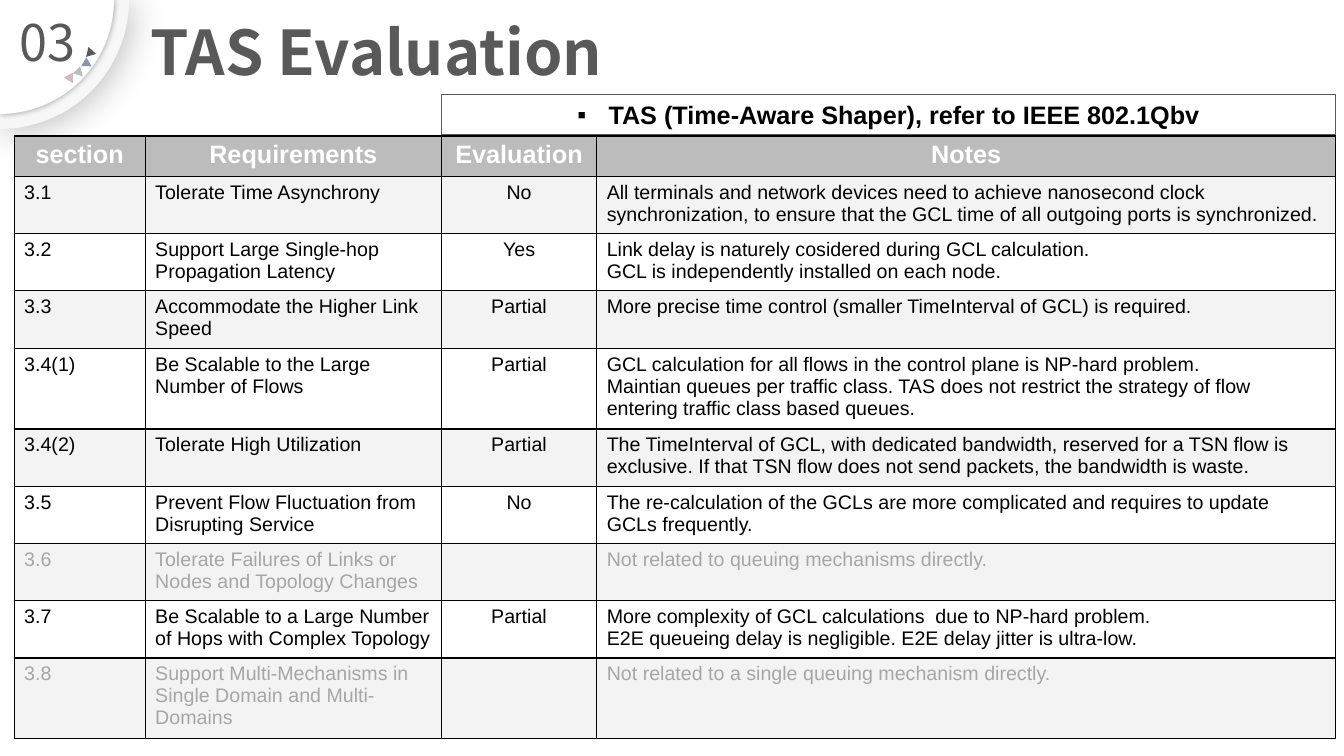
import dataclasses
import math

import lxml.etree
import pptx
import pptx.dml.color
import pptx.enum.shapes
import pptx.enum.text
import pptx.oxml.ns
import pptx.util

WIDE = pptx.util.Inches(13.33)
HIGH = pptx.util.Inches(7.5)
SANS, HEAD = "Arial", "Noto Sans CJK SC"
DARK, GRAY, PALE, DIM = "595959", "BCBCBC", "F3F3F3", "A6A6A6"
BLACK, WHITE = "000000", "FFFFFF"
ALIGN = pptx.enum.text.PP_ALIGN
FORMS = pptx.enum.shapes.MSO_SHAPE
qn = pptx.oxml.ns.qn


def across(share: float) -> int:
    """Percent of the slide's width."""
    return round(WIDE * share / 100)


def down(share: float) -> int:
    """Percent of the slide's height."""
    return round(HIGH * share / 100)


@dataclasses.dataclass
class Box:
    """Place and size in percent of the slide."""
    left: float
    top: float
    wide: float
    high: float

    def spot(self) -> tuple[int, int, int, int]:
        return across(self.left), down(self.top), across(self.wide), down(self.high)


@dataclasses.dataclass
class Disc:
    reach: float
    fill: str
    dark: int
    blur: float
    shift: float


@dataclasses.dataclass
class Chip:
    left: float
    top: float
    turn: float
    fill: str


@dataclasses.dataclass
class Row:
    label: str
    need: str
    grade: str
    notes: str
    high: float = 7.33
    ink: str = BLACK


DISCS = [Disc(9.6, "F7F7F7", 25, 26, 3), Disc(8.48, WHITE, 40, 5, 0)]
CHIPS = [
    Chip(6.45, 6.4, 103.1, DARK),
    Chip(6.15, 7.87, 120.4, "8496B0"),
    Chip(5.55, 9.07, 135.4, GRAY),
    Chip(4.88, 9.87, 150.4, "D7B5C6"),
]
COLS = [9.75, 22.05, 11.55, 54.98]
ROWS = [
    Row("section", "Requirements", "Evaluation", "Notes", 5.07, WHITE),
    Row("3.1", "Tolerate Time Asynchrony", "No",
        "All terminals and network devices need to achieve nanosecond clock synchronization, "
        "to ensure that the GCL time of all outgoing ports is synchronized."),
    Row("3.2", "Support Large Single-hop Propagation Latency", "Yes",
        "Link delay is naturely cosidered during GCL calculation.\n"
        "GCL is independently installed on each node."),
    Row("3.3", "Accommodate the Higher Link Speed", "Partial",
        "More precise time control (smaller TimeInterval of GCL) is required.", 7.6),
    Row("3.4(1)", "Be Scalable to the Large Number of Flows", "Partial",
        "GCL calculation for all flows in the control plane is NP-hard problem.\n"
        "Maintian queues per traffic class. TAS does not restrict the strategy of flow "
        "entering traffic class based queues.", 7.6),
    Row("3.4(2)", "Tolerate High Utilization", "Partial",
        "The TimeInterval of GCL, with dedicated bandwidth, reserved for a TSN flow is "
        "exclusive. If that TSN flow does not send packets, the bandwidth is waste."),
    Row("3.5", "Prevent Flow Fluctuation from Disrupting Service", "No",
        "The re-calculation of the GCLs are more complicated and requires to update GCLs "
        "frequently."),
    Row("3.6", "Tolerate Failures of Links or Nodes and Topology Changes", "",
        "Not related to queuing mechanisms directly.", 7.6, DIM),
    Row("3.7", "Be Scalable to a Large Number of Hops with Complex Topology", "Partial",
        "More complexity of GCL calculations  due to NP-hard problem.\n"
        "E2E queueing delay is negligible. E2E delay jitter is ultra-low."),
    Row("3.8", "Support Multi-Mechanisms in Single Domain and Multi-Domains", "",
        "Not related to a single queuing mechanism directly.", ink=DIM),
]


def paint(fill, tint: str) -> None:
    fill.solid()
    fill.fore_color.rgb = pptx.dml.color.RGBColor.from_string(tint)


def write(frame, text: str, *, size: float, ink: str, font: str = SANS,
          bold: bool = False, align=ALIGN.LEFT, space: float = 1) -> None:
    frame.word_wrap = True
    for at, line in enumerate(text.split("\n") if text else []):
        para = frame.add_paragraph() if at else frame.paragraphs[0]
        para.alignment = align
        para.line_spacing = space
        run = para.add_run()
        run.text = line
        run.font.size = pptx.util.Pt(size)
        run.font.name = font
        run.font.bold = bold
        paint(run.font.fill, ink)
        face = lxml.etree.SubElement(run.font._element, qn("a:ea"))
        face.set("typeface", font)


def plain(shape, tint: str) -> None:
    """Flat fill with neither line nor shadow."""
    shape.shadow.inherit = False
    shape.line.fill.background()
    paint(shape.fill, tint)


def add_disc(shapes, disc: Disc) -> None:
    """Quarter disc in the top left corner, with a soft shadow."""
    reach = across(disc.reach)
    turns = [math.radians(step * 1.5) for step in range(61)]
    rim = [(round(reach * math.cos(t)), round(reach * math.sin(t))) for t in turns]
    pen = shapes.build_freeform(0, 0)
    pen.add_line_segments(rim, close=True)
    shape = pen.convert_to_shape()
    plain(shape, disc.fill)
    glow = lxml.etree.SubElement(
        shape.element.spPr.find(qn("a:effectLst")), qn("a:outerShdw"),
        blurRad=str(pptx.util.Pt(disc.blur)), dist=str(pptx.util.Pt(disc.shift)),
        dir=str(45 * 60000), algn="tl", rotWithShape="0")
    tint = lxml.etree.SubElement(glow, qn("a:srgbClr"), val=BLACK)
    lxml.etree.SubElement(tint, qn("a:alpha"), val=str(disc.dark * 1000))


def add_chip(shapes, chip: Chip) -> None:
    box = Box(chip.left, chip.top, 0.75, 1.2)
    shape = shapes.add_shape(FORMS.ISOSCELES_TRIANGLE, *box.spot())
    shape.rotation = chip.turn
    plain(shape, chip.fill)


def edge(cell) -> None:
    """Thin black border on all four sides."""
    props = cell._tc.get_or_add_tcPr()
    for side in "LRTB":
        line = lxml.etree.SubElement(props, qn(f"a:ln{side}"), w=str(pptx.util.Pt(1)))
        fill = lxml.etree.SubElement(line, qn("a:solidFill"))
        lxml.etree.SubElement(fill, qn("a:srgbClr"), val=BLACK)


def add_grid(shapes) -> None:
    box = Box(1.05, 18, sum(COLS), sum(row.high for row in ROWS))
    table = shapes.add_table(len(ROWS), len(COLS), *box.spot()).table
    for col, wide in zip(table.columns, COLS):
        col.width = across(wide)
    for r, row in enumerate(ROWS):
        table.rows[r].height = down(row.high)
        top = r == 0
        tint = GRAY if top else PALE if r % 2 else WHITE
        for c, text in enumerate((row.label, row.need, row.grade, row.notes)):
            cell = table.cell(r, c)
            edge(cell)
            paint(cell.fill, tint)
            write(cell.text_frame, text, size=18 if top else 14, ink=row.ink, bold=top,
                  align=ALIGN.CENTER if top or c == 2 else ALIGN.LEFT)


def add_note(shapes) -> None:
    """Bulleted banner above the table."""
    note = shapes.add_shape(FORMS.RECTANGLE, *Box(32.85, 12.53, 66.52, 5.33).spot())
    note.shadow.inherit = False
    note.fill.background()
    paint(note.line.fill, DARK)
    note.line.width = pptx.util.Pt(0.75)
    frame = note.text_frame
    write(frame, "TAS (Time-Aware Shaper), refer to IEEE 802.1Qbv", size=18,
          ink=BLACK, bold=True, align=ALIGN.CENTER)
    props = frame.paragraphs[0]._p.get_or_add_pPr()
    dent = pptx.util.Inches(0.31)
    props.set("marL", str(dent))
    props.set("indent", str(-dent))
    lxml.etree.SubElement(props, qn("a:buFont"), typeface=SANS)
    lxml.etree.SubElement(props, qn("a:buChar"), char="▪")


def main() -> None:
    deck = pptx.Presentation()
    deck.slide_width, deck.slide_height = WIDE, HIGH
    shapes = deck.slides.add_slide(deck.slide_layouts[6]).shapes
    for disc in DISCS:
        add_disc(shapes, disc)
    for chip in CHIPS:
        add_chip(shapes, chip)
    count = shapes.add_textbox(*Box(0.3, 0.8, 6.53, 9.47).spot())
    write(count.text_frame, "03", size=36, ink=DARK, font=HEAD, align=ALIGN.CENTER)
    title = shapes.add_textbox(*Box(10.43, 5.47, 46.35, 6.93).spot())
    title.text_frame.vertical_anchor = pptx.enum.text.MSO_ANCHOR.BOTTOM
    write(title.text_frame, "TAS Evaluation", size=44, ink=DARK, font=HEAD,
          bold=True, space=0.9)
    add_grid(shapes)
    add_note(shapes)
    deck.save("out.pptx")


if __name__ == "__main__":
    main()
